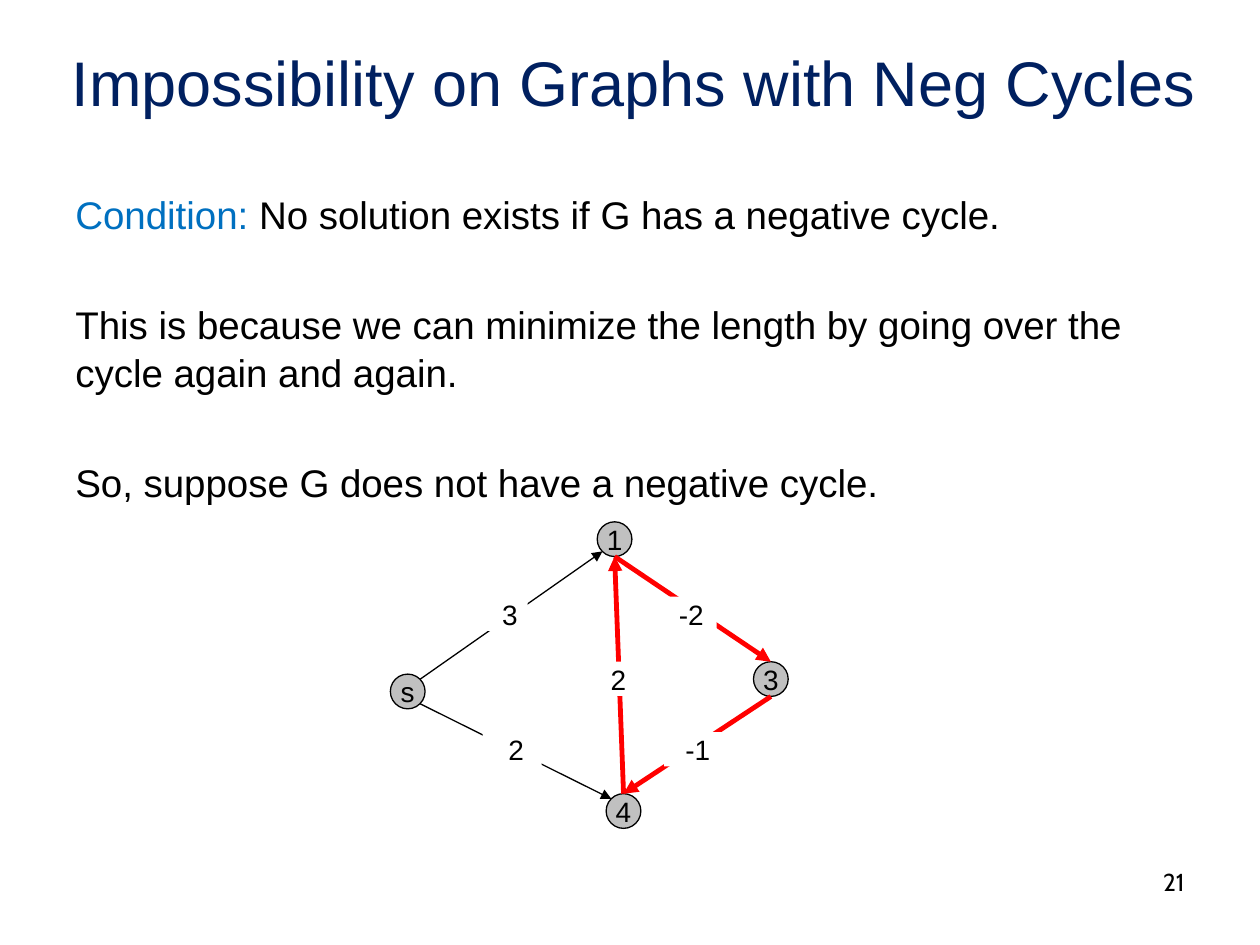
from lxml.etree import SubElement
from pptx import Presentation
from pptx.dml.color import RGBColor
from pptx.enum.shapes import MSO_CONNECTOR, MSO_SHAPE
from pptx.enum.text import MSO_ANCHOR, PP_ALIGN
from pptx.oxml.ns import qn
from pptx.util import Cm, Pt

BLACK, RED, GREY, WHITE = "000000", "FF0000", "C0C0C0", "FFFFFF"
NAVY, BLUE = "002060", "0070C0"
NODE_SIZE = 0.7
LABEL_HEIGHT = 0.69

# Points on a node, as fractions of its size
TOP, BOTTOM = (0.5, 0), (0.5, 1)
TOP_LEFT, TOP_RIGHT = (0.15, 0.15), (0.85, 0.15)
BOTTOM_LEFT, BOTTOM_RIGHT = (0.15, 0.85), (0.85, 0.85)


def color(hex_string):
    return RGBColor.from_string(hex_string)


class GraphSlide:
    font_name = "Arial"
    graph_font_size = 16

    def __init__(self, slide):
        self.slide = slide
        self.nodes = {}

    def format_runs(self, paragraph, size, hex_color=BLACK, font_name=None):
        for run in paragraph.runs:
            run.font.name = font_name or self.font_name
            run.font.size = Pt(size)
            run.font.color.rgb = color(hex_color)

    def text_box(self, left, top, width, height):
        shape = self.slide.shapes.add_textbox(
            Cm(left), Cm(top), Cm(width), Cm(height))
        shape.text_frame.word_wrap = True
        return shape.text_frame

    def line_of_text(self, text, box, size, hex_color, alignment, font_name=None):
        text_frame = self.text_box(*box)
        text_frame.text = text
        paragraph = text_frame.paragraphs[0]
        paragraph.alignment = alignment
        self.format_runs(paragraph, size, hex_color, font_name)

    def body(self, texts, box, size, gap):
        text_frame = self.text_box(*box)
        text_frame.text = "\n".join(texts)
        for index, paragraph in enumerate(text_frame.paragraphs):
            paragraph.line_spacing = 1.04
            paragraph.space_before = Pt(gap if index else 0)
            self.format_runs(paragraph, size)
        return text_frame

    def graph_shape(self, kind, text, box, fill, indent=0):
        shape = self.slide.shapes.add_shape(kind, *(Cm(value) for value in box))
        shape.shadow.inherit = False
        shape.fill.solid()
        shape.fill.fore_color.rgb = color(fill)
        shape.line.fill.background()
        text_frame = shape.text_frame
        text_frame.margin_left = Cm(indent)
        text_frame.margin_right = text_frame.margin_top = text_frame.margin_bottom = 0
        text_frame.vertical_anchor = MSO_ANCHOR.MIDDLE
        text_frame.word_wrap = False
        text_frame.text = text
        paragraph = text_frame.paragraphs[0]
        paragraph.alignment = PP_ALIGN.CENTER
        self.format_runs(paragraph, self.graph_font_size)
        return shape

    def node(self, name, left, top):
        box = (left, top, NODE_SIZE, NODE_SIZE)
        shape = self.graph_shape(MSO_SHAPE.OVAL, name, box, GREY)
        shape.line.color.rgb = color(BLACK)
        shape.line.width = Pt(0.75)
        self.nodes[name] = (left, top)

    def edge(self, start, start_side, end, end_side, hex_color, width):
        points = [
            Cm(position + NODE_SIZE * fraction)
            for name, side in ((start, start_side), (end, end_side))
            for position, fraction in zip(self.nodes[name], side)
        ]
        connector = self.slide.shapes.add_connector(MSO_CONNECTOR.STRAIGHT, *points)
        connector.line.color.rgb = color(hex_color)
        connector.line.width = Pt(width)
        SubElement(connector.line._get_or_add_ln(), qn("a:tailEnd"), type="triangle")
        SubElement(connector._element.spPr, qn("a:effectLst"))

    def edge_label(self, text, left, top, width, indent):
        box = (left, top, width, LABEL_HEIGHT)
        self.graph_shape(MSO_SHAPE.RECTANGLE, text, box, WHITE, indent)


def main():
    presentation = Presentation()
    presentation.slide_width, presentation.slide_height = Cm(25.4), Cm(19.05)
    page = GraphSlide(presentation.slides.add_slide(presentation.slide_layouts[6]))

    # Title
    page.line_of_text("Impossibility on Graphs with Neg Cycles",
                      (0.71, 0.76, 24.13, 3.18), 36, NAVY, PP_ALIGN.CENTER)

    # Body, with the first word highlighted
    body = page.body([
        "Condition:",
        "This is because we can minimize the length by going over the "
        "cycle again and again.",
        "So, suppose G does not have a negative cycle.",
    ], (1.27, 3.68, 22.86, 13.34), size=22, gap=35.4)
    condition = body.paragraphs[0]
    condition.add_run().text = " No solution exists if G has a negative cycle."
    page.format_runs(condition, 22)
    condition.runs[0].font.color.rgb = color(BLUE)

    # Slide number
    page.line_of_text("21", (18.21, 17.35, 5.92, 1.32), 14, BLACK,
                      PP_ALIGN.RIGHT, "Cabin")

    # Graph nodes
    for name, left, top in (("s", 7.87, 13.59), ("1", 12.04, 10.52),
                            ("3", 15.19, 13.34), ("4", 12.22, 16)):
        page.node(name, left, top)

    # Plain edges, then the negative cycle
    page.edge("s", TOP_RIGHT, "1", BOTTOM_LEFT, BLACK, 0.75)
    page.edge("s", BOTTOM_RIGHT, "4", TOP_LEFT, BLACK, 0.75)
    for start, end in (("4", "1"), ("3", "4"), ("1", "3")):
        start_side = TOP if start == "4" else BOTTOM
        end_side = BOTTOM if end == "1" else TOP
        page.edge(start, start_side, end, end_side, RED, 2.75)

    # Edge lengths
    for text, left, top, width, indent in (
        ("2", 9.73, 14.76, 1.19, 0.16),
        ("2", 11.89, 13.34, 0.99, 0.16),
        ("3", 9.45, 12.03, 1.19, 0.47),
        ("-2", 13.26, 12.03, 1.19, 0.16),
        ("-1", 13.39, 14.76, 1.19, 0.16),
    ):
        page.edge_label(text, left, top, width, indent)

    presentation.save("out.pptx")


if __name__ == "__main__":
    main()
